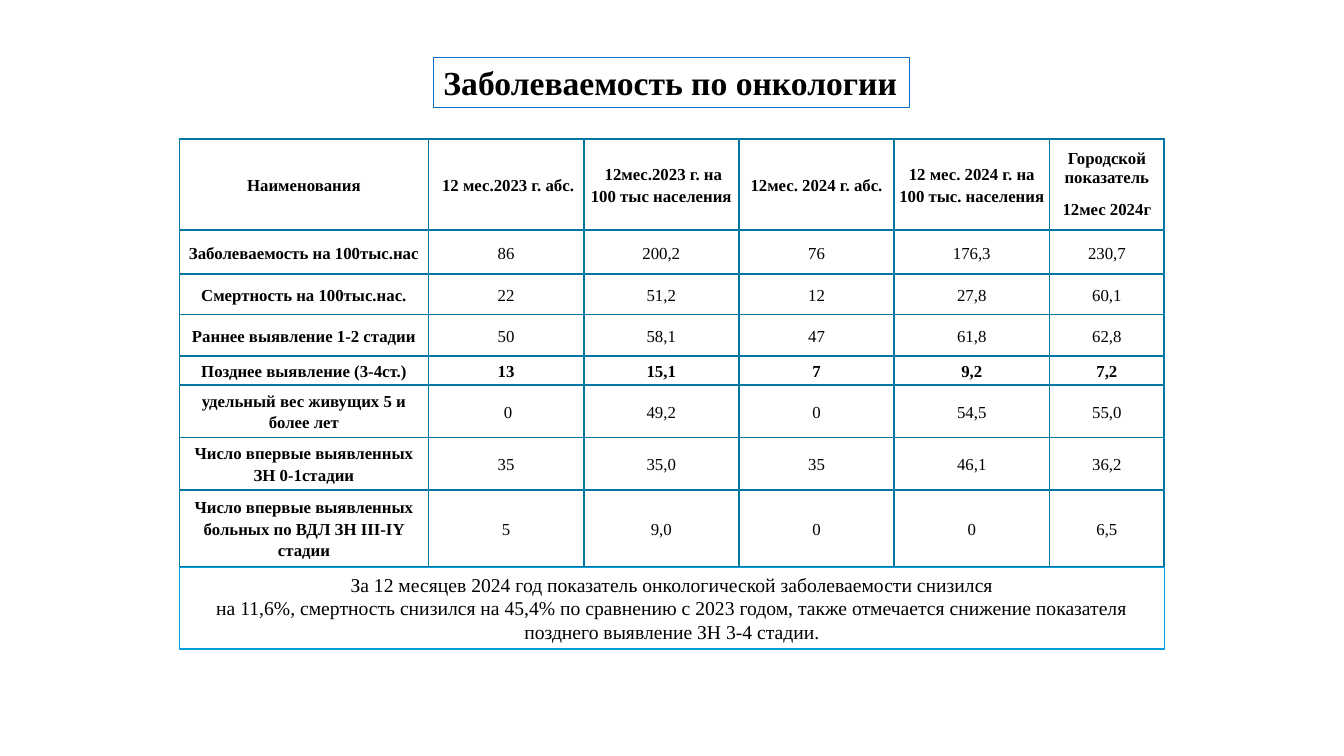
from lxml.etree import SubElement
from pptx import Presentation
from pptx.dml.color import RGBColor
from pptx.enum.shapes import MSO_SHAPE
from pptx.enum.text import MSO_ANCHOR, MSO_AUTO_SIZE, PP_ALIGN
from pptx.oxml.ns import qn
from pptx.util import Inches, Pt

WHITE = RGBColor(0xFF, 0xFF, 0xFF)
BLACK = RGBColor(0x00, 0x00, 0x00)
TITLE_BLUE = RGBColor(0x0F, 0x6F, 0xC6)
GRID_BLUE = RGBColor(0x00, 0x76, 0xA3)
SUMMARY_BLUE = RGBColor(0x00, 0x9D, 0xD9)
FONT = "Times New Roman"

COLUMN_WIDTHS = [2.47, 1.54, 1.54, 1.54, 1.54, 1.14]
ROW_HEIGHTS = [0.9, 0.44, 0.4, 0.41, 0.29, 0.52, 0.52, 0.76]
LATE_DETECTION_ROW = 4
INDICATORS = [
    ["Наименования", " 12 мес.2023 г. абс.", " 12мес.2023 г. на 100 тыс населения",
     "12мес. 2024 г. абс.", "12 мес. 2024 г. на 100 тыс. населения",
     "Городской показатель\n12мес 2024г"],
    ["Заболеваемость на 100тыс.нас", "86", "200,2", "76", "176,3", "230,7"],
    ["Смертность на 100тыс.нас.", "22", "51,2", "12", "27,8", "60,1"],
    ["Раннее выявление 1-2 стадии", "50", "58,1", "47", "61,8", "62,8"],
    ["Позднее выявление (3-4ст.)", "13", "15,1", "7", "9,2", "7,2"],
    ["удельный вес живущих 5 и более лет", " 0", "49,2", "0", "54,5", "55,0"],
    ["Число впервые выявленных ЗН 0-1стадии", "35", "35,0", "35", "46,1", "36,2"],
    ["Число впервые выявленных больных по ВДЛ ЗН III-IY стадии",
     "5", "9,0", "0", "0", "6,5"],
]
SUMMARY = (
    "За 12 месяцев 2024 год показатель онкологической заболеваемости снизился\n"
    "на 11,6%, смертность снизился на 45,4% по сравнению с 2023 годом, "
    "также отмечается снижение показателя позднего выявление ЗН 3-4 стадии."
)


def style_paragraphs(frame, size, bold, align):
    for paragraph in frame.paragraphs:
        paragraph.alignment = align
        paragraph.font.name = FONT
        paragraph.font.size = Pt(size)
        paragraph.font.bold = bold
        paragraph.font.color.rgb = BLACK


def add_framed_text(slide, box, text, outline, size, bold, align, wrap):
    panel = slide.shapes.add_shape(MSO_SHAPE.RECTANGLE, *map(Inches, box))
    panel.shadow.inherit = False
    panel.fill.solid()
    panel.fill.fore_color.rgb = WHITE
    panel.line.color.rgb = outline
    panel.line.width = Pt(1)
    frame = panel.text_frame
    frame.text = text
    frame.word_wrap = wrap
    frame.auto_size = MSO_AUTO_SIZE.SHAPE_TO_FIT_TEXT
    frame.vertical_anchor = MSO_ANCHOR.TOP
    style_paragraphs(frame, size, bold, align)


def add_borders(cell):
    properties = cell._tc.get_or_add_tcPr()
    for position, side in enumerate(("a:lnL", "a:lnR", "a:lnT", "a:lnB")):
        border = SubElement(properties, qn(side), w=str(Pt(1.5)))
        fill = SubElement(border, qn("a:solidFill"))
        SubElement(fill, qn("a:srgbClr"), val=str(GRID_BLUE))
        properties.insert(position, border)


def fill_cell(cell, text, bold):
    cell.text = text
    cell.vertical_anchor = MSO_ANCHOR.MIDDLE
    cell.margin_left = cell.margin_right = Inches(0.03)
    cell.margin_top = cell.margin_bottom = Inches(0.03)
    cell.fill.solid()
    cell.fill.fore_color.rgb = WHITE
    add_borders(cell)
    style_paragraphs(cell.text_frame, 12, bold, PP_ALIGN.CENTER)
    first, *others = cell.text_frame.paragraphs
    if others:
        first.space_after = Pt(10)
    else:
        first.line_spacing = 1.15


def add_indicator_table(slide, box):
    table = slide.shapes.add_table(
        len(ROW_HEIGHTS), len(COLUMN_WIDTHS), *map(Inches, box)).table
    table.first_row = False
    table.horz_banding = False
    for column, width in zip(table.columns, COLUMN_WIDTHS):
        column.width = Inches(width)
    for row, height in zip(table.rows, ROW_HEIGHTS):
        row.height = Inches(height)
    for r, values in enumerate(INDICATORS):
        for c, value in enumerate(values):
            fill_cell(table.cell(r, c), value,
                      c == 0 or r in (0, LATE_DETECTION_ROW))


def main():
    deck = Presentation()
    deck.slide_width = Inches(13.33)
    deck.slide_height = Inches(7.5)
    slide = deck.slides.add_slide(deck.slide_layouts[6])
    add_framed_text(slide, (4.3, 0.57, 4.72, 0.5), "Заболеваемость по онкологии",
                    TITLE_BLUE, 24, True, PP_ALIGN.LEFT, False)
    add_indicator_table(slide, (1.78, 1.38, 9.77, 4.24))
    add_framed_text(slide, (1.78, 5.63, 9.77, 0.81), SUMMARY,
                    SUMMARY_BLUE, 14, False, PP_ALIGN.CENTER, True)
    deck.save("out.pptx")


if __name__ == "__main__":
    main()
